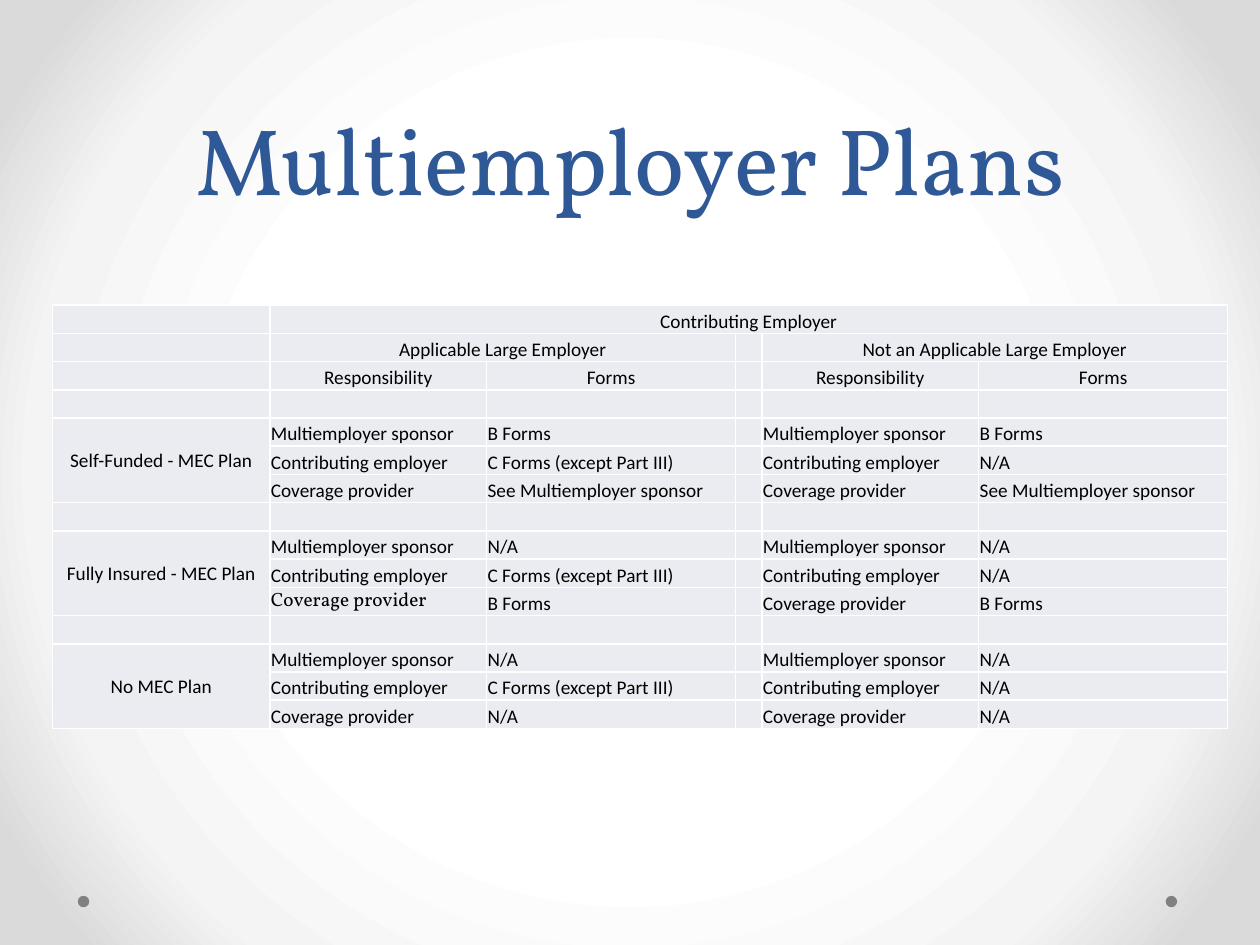
from dataclasses import dataclass

from pptx import Presentation
from pptx.dml.color import RGBColor
from pptx.enum.shapes import MSO_SHAPE
from pptx.enum.text import MSO_ANCHOR, PP_ALIGN
from pptx.oxml import parse_xml
from pptx.oxml.ns import nsdecls
from pptx.util import Cm, Pt


@dataclass(frozen=True)
class Theme:
    title: str = "2F5897"
    text: str = "000000"
    cell: str = "EAECF2"
    line: str = "FFFFFF"
    dot: str = "808080"
    glow: tuple = ((50, "FFFFFF"), (76, "F4F4F4"), (92, "DADADA"))
    serif: str = "Vollkorn"
    sans: str = "Calibri"
    big: int = 54
    small: int = 11


@dataclass(frozen=True)
class Plan:
    name: str
    large: tuple  # forms due from each role, large employer
    other: tuple  # forms due from each role, other employer
    serif: tuple = ()  # roles set in the serif face, large employer


THEME = Theme()
ROLES = ("Multiemployer sponsor", "Contributing employer", "Coverage provider")
PART = "C Forms (except Part III)"
SEE = "See Multiemployer sponsor"
PLANS = (
    Plan("Self-Funded - MEC Plan", ("B Forms", PART, SEE), ("B Forms", "N/A", SEE)),
    Plan("Fully Insured - MEC Plan", ("N/A", PART, "B Forms"),
         ("N/A", "N/A", "B Forms"), ("Coverage provider",)),
    Plan("No MEC Plan", ("N/A", PART, "N/A"), ("N/A", "N/A", "N/A")),
)
COLS = (4.38, 4.37, 5.02, 0.53, 4.37, 5.02)
ROW = 0.57
HEAD = 3  # heading rows
STEP = len(ROLES) + 1  # a blank row, then one row per role
LARGE, OTHER = 1, 4  # first column of each employer group


def style(par, size: int, face: str, color: str, align) -> None:
    par.font.size = Pt(size)
    par.font.name = face
    par.font.color.rgb = RGBColor.from_string(color)
    par.alignment = align


def paint(slide) -> None:
    """Radial background, light in the centre."""
    stops = "".join(
        f'<a:gs pos="{pos * 1000}"><a:srgbClr val="{color}"/></a:gs>'
        for pos, color in THEME.glow)
    slide.background.fill.solid()
    props = slide.background._cSld.bg.bgPr
    props.replace(props[0], parse_xml(
        f'<a:gradFill {nsdecls("a")} rotWithShape="1"><a:gsLst>{stops}</a:gsLst>'
        '<a:path path="circle"><a:fillToRect l="50000" t="50000" r="50000" b="50000"/>'
        '</a:path></a:gradFill>'))


def dot(slide, left: float) -> None:
    shape = slide.shapes.add_shape(
        MSO_SHAPE.OVAL, Cm(left), Cm(18.06), Cm(0.23), Cm(0.23))
    shape.shadow.inherit = False
    shape.fill.solid()
    shape.fill.fore_color.rgb = RGBColor.from_string(THEME.dot)
    shape.line.fill.background()


def frame(cell) -> None:
    """Borders, fill, margins and type shared by every cell."""
    props = cell._tc.get_or_add_tcPr()
    for side in "LRTB":
        props.append(parse_xml(
            f'<a:ln{side} {nsdecls("a")} w="{Pt(1)}"><a:solidFill>'
            f'<a:srgbClr val="{THEME.line}"/></a:solidFill></a:ln{side}>'))
    cell.fill.solid()
    cell.fill.fore_color.rgb = RGBColor.from_string(THEME.cell)
    cell.margin_left = cell.margin_right = cell.margin_top = Cm(0.02)
    cell.margin_bottom = 0
    cell.vertical_anchor = MSO_ANCHOR.BOTTOM
    style(cell.text_frame.paragraphs[0], THEME.small, THEME.sans, THEME.text,
          PP_ALIGN.LEFT)


def write(cell, text: str, align=PP_ALIGN.LEFT, face: str = THEME.sans) -> None:
    par = cell.text_frame.paragraphs[0]
    par.add_run().text = text
    style(par, THEME.small, face, THEME.text, align)


def head(grid) -> None:
    """Three rows of headings."""
    def label(row: int, col: int, text: str, last: int) -> None:
        if last > col:
            grid.cell(row, col).merge(grid.cell(row, last))
        write(grid.cell(row, col), text, PP_ALIGN.CENTER)

    label(0, LARGE, "Contributing Employer", len(COLS) - 1)
    for col, name in ((LARGE, "Applicable Large Employer"),
                      (OTHER, "Not an Applicable Large Employer")):
        label(1, col, name, col + 1)
        label(2, col, "Responsibility", col)
        label(2, col + 1, "Forms", col + 1)


def block(grid, top: int, plan: Plan) -> None:
    """One plan: its name beside a row for each role."""
    name = grid.cell(top, 0)
    name.merge(grid.cell(top + len(ROLES) - 1, 0))
    name.vertical_anchor = MSO_ANCHOR.MIDDLE
    write(name, plan.name, PP_ALIGN.CENTER)
    for col, forms, serif in ((LARGE, plan.large, plan.serif), (OTHER, plan.other, ())):
        for row, (role, form) in enumerate(zip(ROLES, forms), top):
            face = THEME.serif if role in serif else THEME.sans
            write(grid.cell(row, col), role, face=face)
            write(grid.cell(row, col + 1), form)


def chart(slide) -> None:
    count = HEAD + STEP * len(PLANS)
    grid = slide.shapes.add_table(
        count, len(COLS), Cm(1.06), Cm(6.15), Cm(sum(COLS)), Cm(ROW * count)).table
    grid.first_row = grid.horz_banding = False
    for col, width in zip(grid.columns, COLS):
        col.width = Cm(width)
    for row in grid.rows:
        row.height = Cm(ROW)
    for cell in grid.iter_cells():
        frame(cell)
    head(grid)
    for i, plan in enumerate(PLANS):
        block(grid, HEAD + 1 + STEP * i, plan)


def main() -> None:
    deck = Presentation()
    deck.slide_width, deck.slide_height = Cm(25.4), Cm(19.05)
    slide = deck.slides.add_slide(deck.slide_layouts[5])
    paint(slide)

    # Title
    title = slide.shapes.title
    title.left, title.top, title.width, title.height = Cm(1.27), 0, Cm(22.86), Cm(4.45)
    title.text = "Multiemployer Plans"
    title.text_frame.vertical_anchor = MSO_ANCHOR.BOTTOM
    par = title.text_frame.paragraphs[0]
    style(par, THEME.big, THEME.serif, THEME.title, PP_ALIGN.CENTER)
    par.line_spacing = Pt(58)

    # Corner dots and table
    for left in (23.5, 1.57):
        dot(slide, left)
    chart(slide)
    deck.save("out.pptx")


if __name__ == "__main__":
    main()
